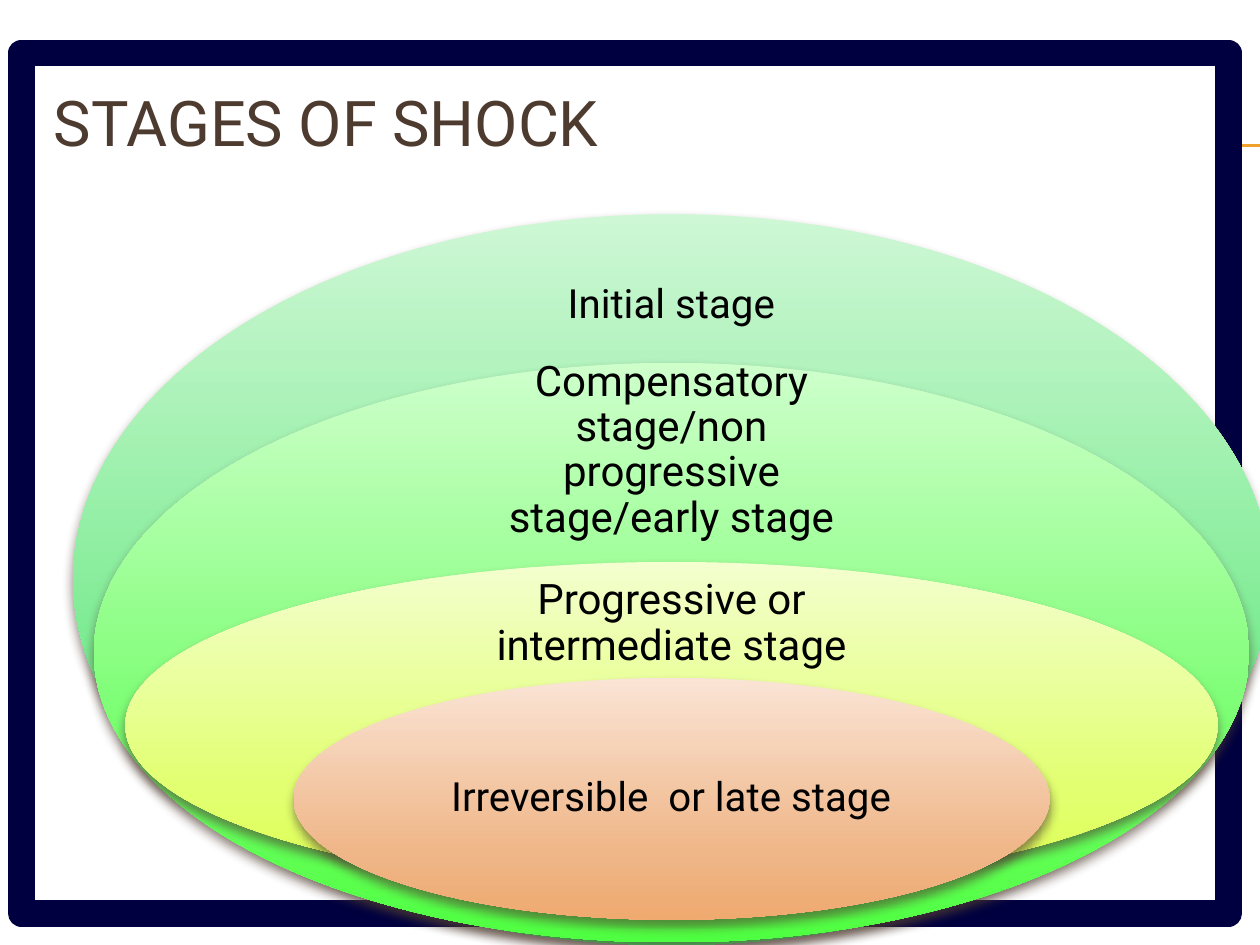
from copy import deepcopy
from typing import NamedTuple

from lxml.etree import SubElement
from pptx import Presentation
from pptx.dml.color import RGBColor
from pptx.enum.shapes import MSO_CONNECTOR as Connector, MSO_SHAPE as Shape
from pptx.enum.text import MSO_ANCHOR as Anchor, PP_ALIGN as Align
from pptx.oxml.ns import qn
from pptx.util import Inches, Pt

FONT = "Roboto"
BROWN = "4E3B30"
CENTER = 5.33


class Stage(NamedTuple):
    """One nested oval and its label, centred on the same vertical axis."""

    label: str
    size: int
    inset: float
    top: float
    width: float
    height: float
    label_top: float
    label_width: float
    label_height: float
    colors: tuple[str, str, str]


STAGES = [
    Stage("Initial stage", 23, 0.18, 1.7, 9.5, 5.8, 1.99, 2.66, 0.87,
          ("CEF7D5", "6BE984", "44EA69")),
    Stage("Compensatory stage/non progressive stage/early stage", 24, 0.19,
          2.88, 9.17, 4.6, 3.16, 3.2, 0.83, ("CEFFCB", "6EFE64", "4FFF41")),
    Stage("Progressive or intermediate stage", 24, 0.19,
          4.46, 8.67, 2.59, 4.66, 4.04, 0.58, ("F3FFCE", "E1FF6E", "DDFF4F")),
    Stage("Irreversible  or late stage", 23, 0.18,
          5.38, 6, 1.92, 5.86, 4.24, 0.96, ("FAE4D5", "EFB688", "EFAA6F")),
]


def rgb(color: str) -> RGBColor:
    """Turn a hex string into a colour."""
    return RGBColor.from_string(color)


def add_rule(slide, y: float) -> None:
    """Draw a thin amber line to the right edge of the slide."""
    rule = slide.shapes.add_connector(
        Connector.STRAIGHT, Inches(0.56), Inches(y), Inches(10), Inches(y))
    rule.line.color.rgb = rgb("F0A22E")
    rule.line.width = Pt(0.75)
    SubElement(rule._element.spPr, qn("a:effectLst"))


def add_frame(slide) -> None:
    """Draw the white panel with its heavy navy border."""
    frame = slide.shapes.add_shape(
        Shape.RECTANGLE, Inches(0.17), Inches(0.42), Inches(9.58), Inches(6.83))
    frame.shadow.inherit = False
    frame.fill.solid()
    frame.fill.fore_color.rgb = rgb("FFFFFF")
    frame.line.color.rgb = rgb("000040")
    frame.line.width = Pt(15.25)


def add_text(slide, text: str, left: float, top: float, width: float,
             height: float, size: int, color: str):
    """Add a wrapped, vertically centred text box and return its frame."""
    box = slide.shapes.add_textbox(
        Inches(left), Inches(top), Inches(width), Inches(height))
    frame = box.text_frame
    frame.word_wrap = True
    frame.vertical_anchor = Anchor.MIDDLE
    paragraph = frame.paragraphs[0]
    paragraph.text = text
    paragraph.font.name = FONT
    paragraph.font.size = Pt(size)
    paragraph.font.color.rgb = rgb(color)
    return frame


def add_shadow(shape) -> None:
    """Give a shape a soft brown shadow below it."""
    shape.shadow.inherit = False
    effects = shape._element.spPr.find(qn("a:effectLst"))
    shadow = SubElement(effects, qn("a:outerShdw"), blurRad=str(Pt(6)),
                        dist=str(Pt(4)), dir="5400000", rotWithShape="0")
    color = SubElement(shadow, qn("a:srgbClr"), val=BROWN)
    SubElement(color, qn("a:alpha"), val="60000")


def add_stage(slide, stage: Stage) -> None:
    """Draw a gradient oval and its label."""
    oval = slide.shapes.add_shape(
        Shape.OVAL, Inches(CENTER - stage.width / 2), Inches(stage.top),
        Inches(stage.width), Inches(stage.height))
    oval.line.fill.background()
    oval.fill.gradient()
    oval.fill.gradient_angle = 270
    stops = oval._element.spPr.find(qn("a:gradFill")).find(qn("a:gsLst"))
    stops.append(deepcopy(stops[-1]))
    for stop, position, color in zip(
            oval.fill.gradient_stops, (0, 0.72, 1), stage.colors):
        stop.position = position
        stop.color.rgb = rgb(color)
    add_shadow(oval)

    frame = add_text(slide, stage.label, CENTER - stage.label_width / 2,
                     stage.label_top, stage.label_width, stage.label_height,
                     stage.size, "000000")
    frame.margin_left = frame.margin_right = Inches(stage.inset)
    frame.margin_top = frame.margin_bottom = Inches(stage.inset)
    frame.paragraphs[0].alignment = Align.CENTER
    frame.paragraphs[0].line_spacing = 0.9


def main() -> None:
    """Build the slide and save it."""
    presentation = Presentation()
    presentation.slide_width = Inches(10)
    presentation.slide_height = Inches(7.5)
    slide = presentation.slides.add_slide(presentation.slide_layouts[6])
    for y in (1.15, 1.16):
        add_rule(slide, y)
    add_frame(slide)
    add_text(slide, "STAGES OF SHOCK", 0.33, 0.5, 9.5, 0.92, 36, BROWN)
    for stage in STAGES:
        add_stage(slide, stage)
    presentation.save("out.pptx")


if __name__ == "__main__":
    main()
